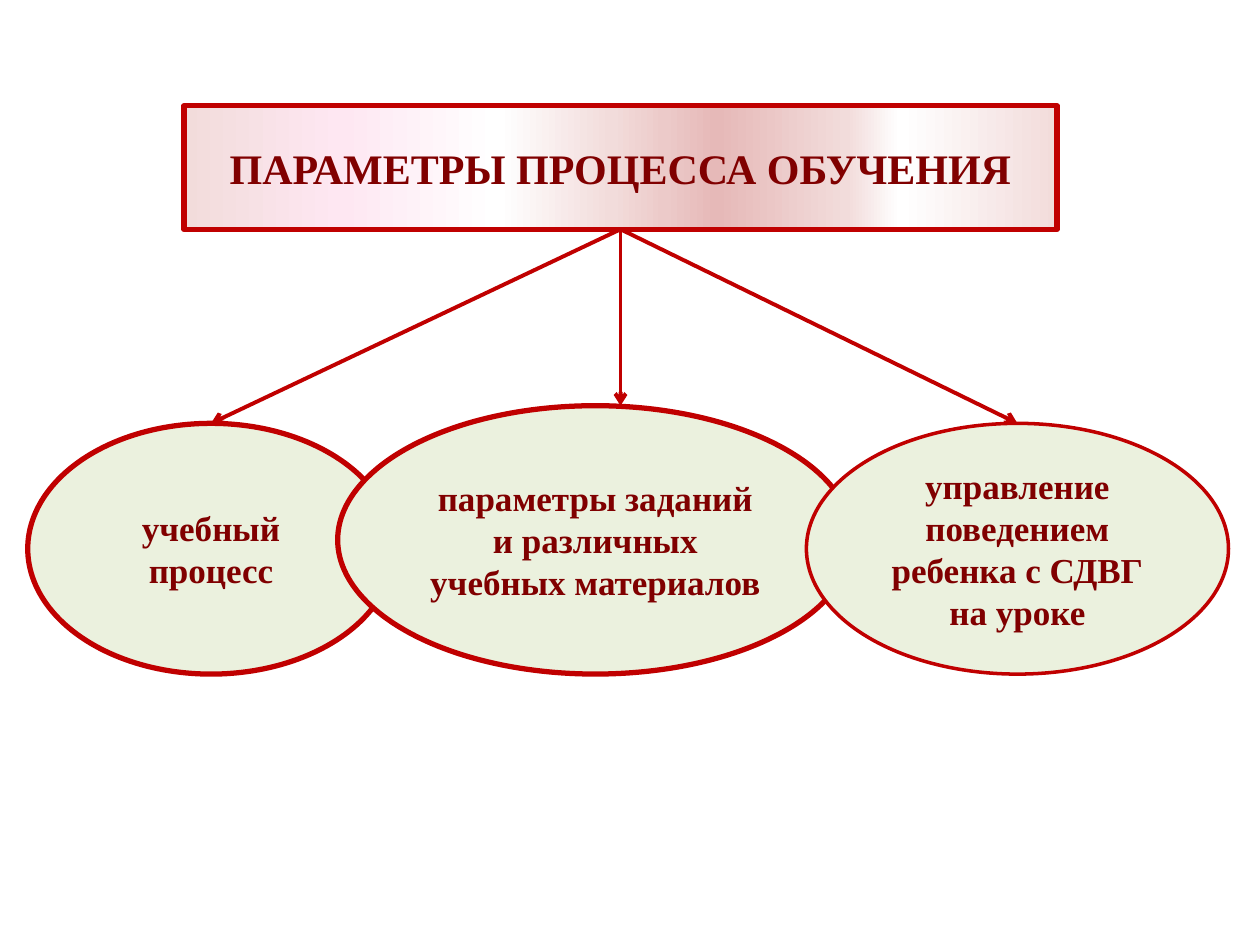
from lxml import etree
from pptx import Presentation
from pptx import util as u
from pptx.dml.color import RGBColor
from pptx.enum import shapes, text
from pptx.oxml import ns

# Content
TITLE = "ПАРАМЕТРЫ ПРОЦЕССА ОБУЧЕНИЯ"
TITLE_BOX = (1.46, 0.84, 6.93, 0.98)
# text, box (left, top, width, height), outline width, arrow joins its top
PARAMETERS = [
    ("учебный процесс", (0.22, 3.36, 2.91, 1.99), 3, True),
    ("параметры заданий и различных учебных материалов",
     (2.68, 3.22, 4.09, 2.13), 3, False),
    ("управление поведением ребенка с СДВГ на уроке",
     (6.4, 3.36, 3.35, 1.99), 2, True),
]
COLORS = {"red": "C00000", "text": "800000", "oval": "EBF1DE"}
GRADIENT = [(0, "F2DCDB"), (18, "FEE7F2"), (36, "FFFFFF"), (49, "F2DCDB"), (55, "ECCAC9"),
            (61, "E6B9B8"), (76, "F2DCDB"), (82, "FFFFFF"), (100, "F2DCDB")]
FONT = "Times New Roman"


def color(name):
    return RGBColor.from_string(COLORS[name])


def place(shape, box):
    shape.left, shape.top, shape.width, shape.height = map(u.Inches, box)


def outline(shape, width):
    shape.line.color.rgb = color("red")
    shape.line.width = u.Pt(width)


def write(shape, words, size):
    frame = shape.text_frame
    frame.text = words
    frame.word_wrap = True
    frame.auto_size = text.MSO_AUTO_SIZE.NONE
    frame.vertical_anchor = text.MSO_ANCHOR.MIDDLE
    paragraph = frame.paragraphs[0]
    paragraph.alignment = text.PP_ALIGN.CENTER
    font = paragraph.runs[0].font
    font.name, font.size, font.bold = FONT, u.Pt(size), True
    font.color.rgb = color("text")


def fill_gradient(shape, stops):
    shape.fill.gradient()
    shape.fill.gradient_angle = 0
    stop_list = shape.element.spPr.find(".//" + ns.qn("a:gsLst"))
    for old_stop in list(stop_list):
        stop_list.remove(old_stop)
    for position, value in stops:
        stop = etree.SubElement(stop_list, ns.qn("a:gs"), pos=str(position * 1000))
        etree.SubElement(stop, ns.qn("a:srgbClr"), val=value)


presentation = Presentation()
presentation.slide_width, presentation.slide_height = u.Inches(10), u.Inches(7.5)
slide = presentation.slides.add_slide(presentation.slide_layouts[5])

# Title box
title = slide.shapes.title
place(title, TITLE_BOX)
fill_gradient(title, GRADIENT)
outline(title, 3)
write(title, TITLE, 24)

# Parameter ovals
ovals = []
for words, box, width, joined in PARAMETERS:
    oval = slide.shapes.add_shape(shapes.MSO_SHAPE.OVAL, *map(u.Inches, box))
    oval.shadow.inherit = False
    oval.fill.solid()
    oval.fill.fore_color.rgb = color("oval")
    outline(oval, width)
    write(oval, words, 20)
    ovals.append((oval, joined))

# Arrows from the title box; the middle one drops straight down
center = title.left + title.width // 2
for oval, joined in ovals:
    arrow = slide.shapes.add_connector(
        shapes.MSO_CONNECTOR.STRAIGHT, center, title.top + title.height, center, oval.top)
    arrow.begin_connect(title, 2)
    if joined:
        arrow.end_connect(oval, 0)
    outline(arrow, 2.25)
    etree.SubElement(arrow.line._get_or_add_ln(), ns.qn("a:tailEnd"), type="arrow")
    etree.SubElement(arrow.element.spPr, ns.qn("a:effectLst"))

presentation.save("out.pptx")
